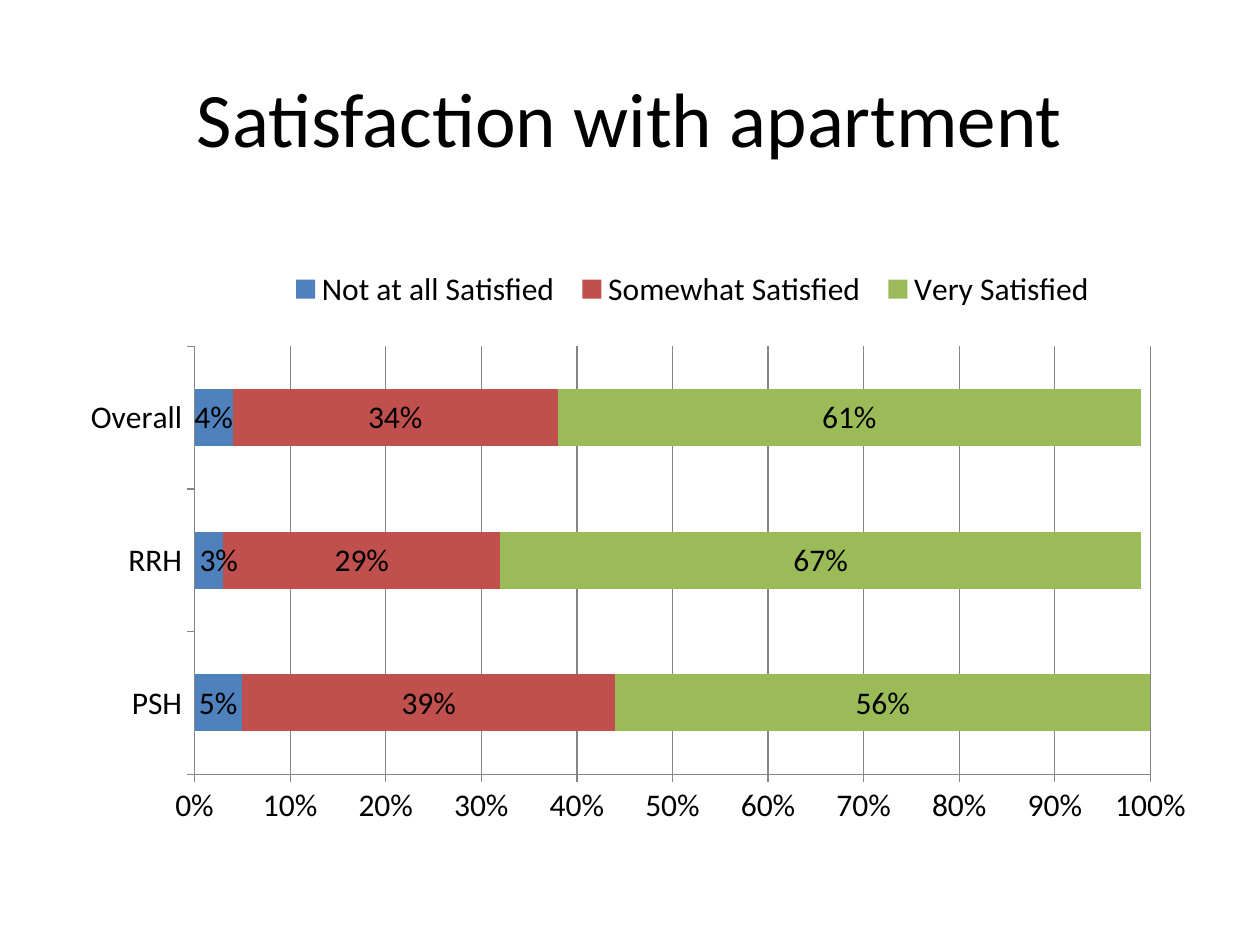
from dataclasses import dataclass

from lxml.etree import SubElement
from pptx import Presentation
from pptx.chart.data import CategoryChartData
from pptx.dml.color import RGBColor
from pptx.enum.chart import (
    XL_CHART_TYPE as ChartType,
    XL_LABEL_POSITION as LabelPos,
    XL_LEGEND_POSITION as LegendPos,
    XL_TICK_MARK as TickMark,
)
from pptx.enum.text import MSO_ANCHOR as Anchor, PP_ALIGN as Align
from pptx.oxml.ns import qn
from pptx.util import Pt

COLORS = {
    "text": "000000",
    "grid": "868686",
    "low": "4F81BD",
    "middle": "C0504D",
    "high": "9BBB59",
}
FONT = "Calibri"
GROUPS = ("PSH", "RRH", "Overall")


@dataclass(frozen=True)
class Rating:
    name: str
    shares: tuple[float, ...]
    color: str


RATINGS = (
    Rating("Not at all Satisfied", (0.05, 0.03, 0.04), "low"),
    Rating("Somewhat Satisfied", (0.39, 0.29, 0.34), "middle"),
    Rating("Very Satisfied", (0.56, 0.67, 0.61), "high"),
)
NARROW_BAR_LABELS = (LabelPos.INSIDE_END, LabelPos.INSIDE_BASE, LabelPos.CENTER)


def rgb(key: str) -> RGBColor:
    return RGBColor.from_string(COLORS[key])


def format_font(font, size: float) -> None:
    font.name = FONT
    font.size = Pt(size)
    font.color.rgb = rgb("text")


def set_layout(parent, before: str, box: tuple[float, ...], inner: bool = False) -> None:
    """Place a chart part by fractions of the chart: left, top, width, height."""
    layout = parent.find(qn("c:layout"))
    if layout is None:
        layout = SubElement(parent, qn("c:layout"))
        parent.find(qn(before)).addprevious(layout)
    manual = SubElement(layout, qn("c:manualLayout"))
    settings = [("layoutTarget", "inner")] if inner else []
    settings += [("xMode", "edge"), ("yMode", "edge"), *zip("xywh", box)]
    for tag, value in settings:
        SubElement(manual, qn(f"c:{tag}")).set("val", str(value))


def format_axis(axis) -> None:
    axis.major_tick_mark = TickMark.OUTSIDE
    axis.minor_tick_mark = TickMark.NONE
    axis.format.line.color.rgb = rgb("grid")
    axis.format.line.width = Pt(0.75)
    format_font(axis.tick_labels.font, 18)


def add_title(slide, text: str) -> None:
    title = slide.shapes.title
    title.left, title.top, title.width, title.height = Pt(36), Pt(21.6), Pt(648), Pt(90)
    frame = title.text_frame
    frame.text = text
    frame.vertical_anchor = Anchor.MIDDLE
    paragraph = frame.paragraphs[0]
    paragraph.alignment = Align.CENTER
    format_font(paragraph.runs[0].font, 44)


def add_satisfaction_chart(slide) -> None:
    data = CategoryChartData(number_format="0%")
    data.categories = GROUPS
    for rating in RATINGS:
        data.add_series(rating.name, rating.shares)
    chart = slide.shapes.add_chart(
        ChartType.BAR_STACKED, Pt(36), Pt(126), Pt(648), Pt(356.4), data
    ).chart
    chart.has_title = False
    format_font(chart.font, 18)

    plot = chart.plots[0]
    plot.gap_width = 150
    plot.overlap = 100
    plot.vary_by_categories = False
    for series, rating in zip(plot.series, RATINGS):
        series.format.fill.solid()
        series.format.fill.fore_color.rgb = rgb(rating.color)
        labels = series.data_labels
        labels.show_value = True
        labels.number_format = "0%"
        labels.number_format_is_linked = False
        format_font(labels.font, 18)
    for index, position in enumerate(NARROW_BAR_LABELS):
        plot.series[0].points[index].data_label.position = position

    format_axis(chart.category_axis)
    share_axis = chart.value_axis
    format_axis(share_axis)
    share_axis.minimum_scale = 0
    share_axis.maximum_scale = 1
    share_axis.major_unit = 0.1
    share_axis.tick_labels.number_format = "0%"
    share_axis.tick_labels.number_format_is_linked = False
    share_axis.has_major_gridlines = True
    share_axis.major_gridlines.format.line.color.rgb = rgb("grid")
    share_axis.major_gridlines.format.line.width = Pt(0.75)

    chart.has_legend = True
    legend = chart.legend
    legend.position = LegendPos.RIGHT
    legend.include_in_layout = False
    format_font(legend.font, 18)

    plot_area = chart.element.find(".//" + qn("c:plotArea"))
    set_layout(plot_area, "c:barChart", (0.116, 0.202, 0.843, 0.686), inner=True)
    legend_box = chart.element.find(".//" + qn("c:legend"))
    set_layout(legend_box, "c:overlay", (0.19, 0.07, 0.73, 0.08))


def main() -> None:
    prs = Presentation()
    prs.slide_width, prs.slide_height = Pt(720), Pt(540)
    slide = prs.slides.add_slide(prs.slide_layouts.get_by_name("Title Only"))
    add_title(slide, "Satisfaction with apartment")
    add_satisfaction_chart(slide)
    prs.save("out.pptx")


if __name__ == "__main__":
    main()
